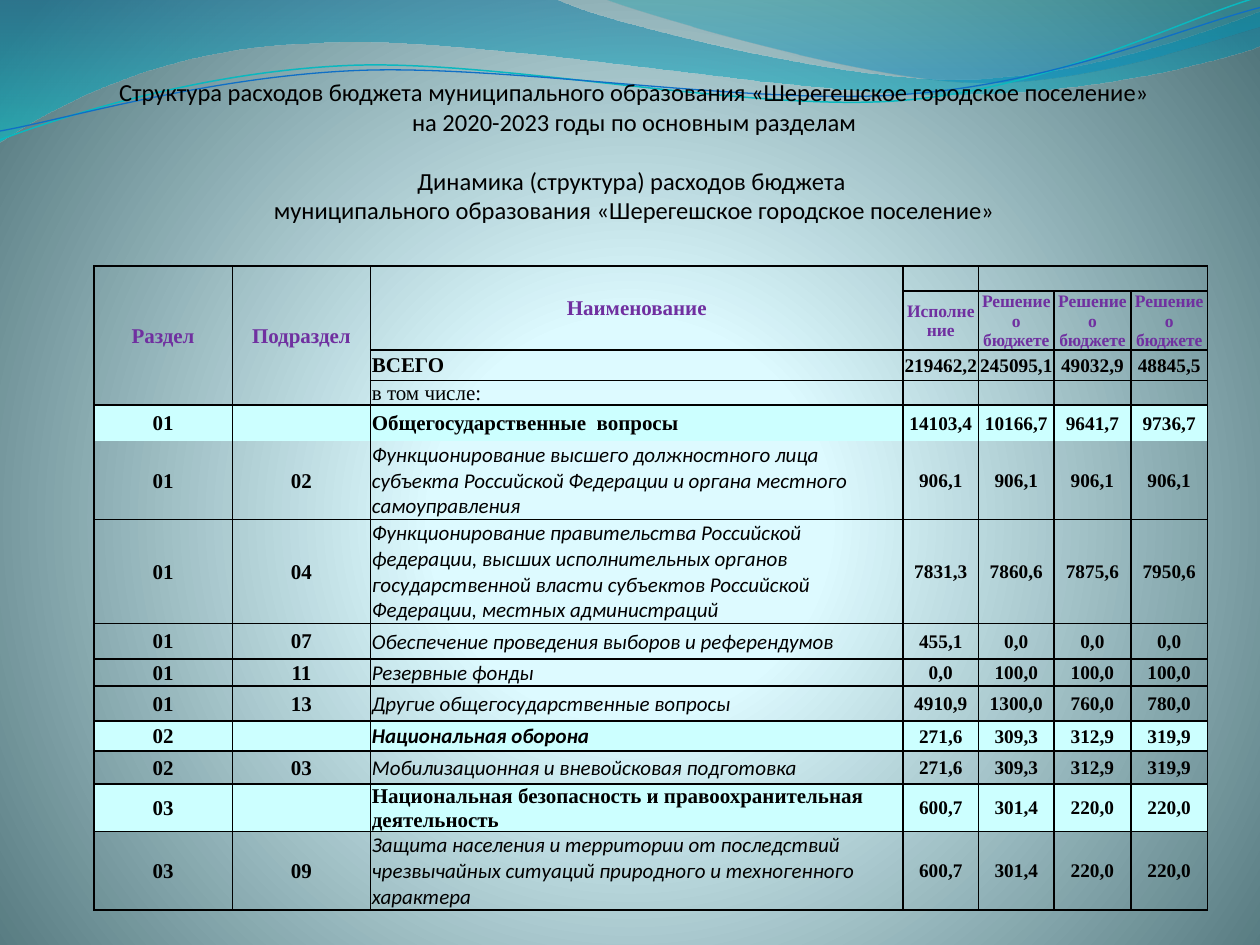
from lxml import etree
from pptx import Presentation
from pptx.dml.color import RGBColor
from pptx.enum.text import MSO_ANCHOR, MSO_AUTO_SIZE, PP_ALIGN
from pptx.oxml.ns import qn
from pptx.util import Inches, Pt

MID, LOW = MSO_ANCHOR.MIDDLE, MSO_ANCHOR.BOTTOM
CENTER, LEFT = PP_ALIGN.CENTER, PP_ALIGN.LEFT
FIT = MSO_AUTO_SIZE.NONE
W, H = Inches(10), Inches(7.5)
UNIT = W / 10  # wave points are tenths of the slide's width
SERIF, SANS = "Times New Roman", "Calibri"
BLACK, PURPLE, AQUA = "000000", "7030A0", "CCFFFF"

# Each wave: start point, then lines (one point) or curves (three points)
WAVES = [
    ([(0, 0), [(4.4, -.01)], [(4.76, .17), (6.64, .63), (7.58, .63)],
      [(8.53, .63), (9.58, .26), (10, .09)], [(10.01, .36)],
      [(9.83, .44), (8.7, .76), (7.46, .75)], [(6.22, .75), (3.82, .28), (2.57, .34)],
      [(1.29, .36), (.46, .83), (-.01, 1.13)]],
     [(0, "0074A1", 45), (100, "00C6CF", 55)]),
    ([(4.79, -.01), [(5.09, .11), (6.82, .62), (7.69, .65)],
      [(8.56, .69), (9.61, .32), (10, .21)], [(10, 0)]],
     [(0, "00A1A9", 30), (80, "008BBF", 45)]),
]
LINES = [
    ([(0, 1.11), [(.48, .93), (1.58, .57), (2.77, .52)],
      [(3.95, .47), (5.93, .89), (7.13, .8)], [(8.33, .71), (9.38, .15), (9.98, -.02)]],
     "0AB8BF", .85),
    ([(0, 1.04), [(.47, .96), (1.64, .61), (2.83, .56)],
      [(4.03, .51), (5.97, .84), (7.17, .75)], [(8.36, .67), (9.41, .21), (10, .06)]],
     "0F6FC6", .75),
]
TITLE = [
    "Структура расходов бюджета муниципального образования «Шерегешское городское поселение»"
    "\vна 2020-2023 годы по основным разделам",
    "Динамика (структура) расходов бюджета "
    "\vмуниципального образования «Шерегешское городское поселение»",
]
COLS = [1.1, 1.1, 4.23, .6, .6, .61, .61]
ROWS = [.2, .47, .24, .18, .29, .47, .83, .28, .21, .28, .24, .26, .36, .47]
PLAN = "Решение о бюджете"
DATA = [
    ("Раздел", "Подраздел", "Наименование", ""),
    ("", "", "", f"Исполнение|{PLAN}|{PLAN}|{PLAN}"),
    ("", "", "ВСЕГО", "219462,2|245095,1|49032,9|48845,5"),
    ("", "", "в том числе:", ""),
    ("01", "", "Общегосударственные  вопросы", "14103,4|10166,7|9641,7|9736,7"),
    ("01", "02", "Функционирование высшего должностного лица субъекта Российской Федерации "
     "и органа местного самоуправления", "906,1|906,1|906,1|906,1"),
    ("01", "04", "Функционирование правительства Российской федерации, высших исполнительных "
     "органов государственной власти субъектов Российской Федерации, местных администраций",
     "7831,3|7860,6|7875,6|7950,6"),
    ("01", "07", "Обеспечение проведения выборов и референдумов", "455,1|0,0|0,0|0,0"),
    ("01", "11", "Резервные фонды", "0,0|100,0|100,0|100,0"),
    ("01", "13", "Другие общегосударственные вопросы", "4910,9|1300,0|760,0|780,0"),
    ("02", "", "Национальная оборона", "271,6|309,3|312,9|319,9"),
    ("02", "03", "Мобилизационная и вневойсковая подготовка", "271,6|309,3|312,9|319,9"),
    ("03", "", "Национальная безопасность и правоохранительная деятельность",
     "600,7|301,4|220,0|220,0"),
    ("03", "09", "Защита населения и территории от последствий чрезвычайных ситуаций "
     "природного и техногенного характера", "600,7|301,4|220,0|220,0"),
]
HEAD, TOP = 2, 4  # heading rows, first section row
MERGES = [(0, 0, 3, 0), (0, 1, 3, 1), (0, 2, 1, 2), (0, 4, 0, 6)]


def color(code):
    return RGBColor.from_string(code)


def grade(fill, stops, aim):
    """Set gradient stops of (place, colour, opacity) and the direction node."""
    fill.gradient()
    grad = fill._xPr.find(qn("a:gradFill"))
    for node in list(grad):
        grad.remove(node)
    group = etree.SubElement(grad, qn("a:gsLst"))
    for pos, code, clear in stops:
        stop = etree.SubElement(group, qn("a:gs"), pos=str(pos * 1000))
        tint = etree.SubElement(stop, qn("a:srgbClr"), val=code)
        if clear < 100:
            etree.SubElement(tint, qn("a:alpha"), val=str(clear * 1000))
    grad.append(aim)


def draw(slide, wave, close):
    """Build the outline from its points, then join triples into curves."""
    start, *parts = wave
    pen = slide.shapes.build_freeform(start[0] * UNIT, start[1] * UNIT)
    pen.add_line_segments([(x * UNIT, y * UNIT) for part in parts for x, y in part],
                          close=close)
    shape = pen.convert_to_shape()
    shape.shadow.inherit = False
    nodes = iter(list(shape._element.iter(qn("a:lnTo"))))
    for part in parts:
        group = [next(nodes) for _ in part]
        if len(group) == 3:
            curve = etree.Element(qn("a:cubicBezTo"))
            group[0].addprevious(curve)
            for node in group:
                curve.append(node[0])
                node.getparent().remove(node)
    return shape


def backdrop(slide):
    aim = etree.Element(qn("a:path"), path="circle")
    etree.SubElement(aim, qn("a:fillToRect"), l="10000", t="110000", r="10000", b="100000")
    grade(slide.background.fill,
          [(0, "DEFBFF", 100), (25, "DDFAFF", 100), (100, "52767C", 100)], aim)
    for wave, stops in WAVES:
        shape = draw(slide, wave, True)
        grade(shape.fill, stops, etree.Element(qn("a:lin"), ang="5400000", scaled="1"))
        shape.line.fill.background()
    for wave, code, width in LINES:
        shape = draw(slide, wave, False)
        shape.fill.background()
        shape.line.color.rgb = color(code)
        shape.line.width = Pt(width)


def style(para, face, size, code, bold=False, slant=False):
    for run in para.runs:
        font = run.font
        font.name, font.size, font.bold, font.italic = face, Pt(size), bold, slant
        font.color.rgb = color(code)


def place(box):
    """Turn percentages of the slide into lengths."""
    return [round(part * side / 100) for part, side in zip(box, (W, H, W, H))]


def heading(slide, box):
    title = slide.shapes.title
    slide.shapes._spTree.append(title._element)  # in front of the waves
    title.left, title.top, title.width, title.height = place(box)
    frame = title.text_frame
    frame.auto_size, frame.vertical_anchor, frame.word_wrap = FIT, LOW, True
    frame.margin_left = frame.margin_right = 0
    frame.margin_top, frame.margin_bottom = Inches(.05), Pt(17)
    frame.text = TITLE[0]
    frame.add_paragraph().text = TITLE[1]
    for para in frame.paragraphs:
        para.alignment = CENTER
        para.space_before = Pt(0)
        style(para, SANS, 14, BLACK)
    frame.paragraphs[1].space_before = Pt(17)


def border(cell, bare):
    props = cell._tc.get_or_add_tcPr()
    for spot, side in enumerate(("lnL", "lnR", "lnT", "lnB")):
        line = etree.Element(qn("a:" + side), w="12700")
        if side == bare:
            etree.SubElement(line, qn("a:noFill"))
        else:
            fill = etree.SubElement(line, qn("a:solidFill"))
            etree.SubElement(fill, qn("a:srgbClr"), val=BLACK)
        props.insert(spot, line)


def look(r, c, row):
    """Face, size, colour, bold and slant of a cell's text."""
    if r < HEAD:
        return SERIF, 12 if c < 3 else 10, PURPLE, True
    if c == 2:
        sub = bool(row[1])
        soft = sub or row[2] == "Национальная оборона"
        return SANS if soft else SERIF, 12, BLACK, not sub and r != 3, soft
    return SERIF, 12 if c < 2 else 11, BLACK, True


def budget(slide, box):
    x, y, w, h = place(box)
    table = slide.shapes.add_table(len(ROWS), len(COLS), x, y, w, h).table
    table.first_row = table.horz_banding = False
    for col, part in zip(table.columns, COLS):
        col.width = int(w * part / sum(COLS))
    for line, part in zip(table.rows, ROWS):
        line.height = int(h * part / sum(ROWS))
    for r, row in enumerate(DATA):
        texts = list(row[:3]) + (row[3].split("|") if row[3] else [""] * 4)
        for c, text in enumerate(texts):
            cell = table.cell(r, c)
            cell.margin_left = cell.margin_right = cell.margin_top = Inches(.01)
            cell.margin_bottom = 0
            cell.vertical_anchor = MID
            para = cell.text_frame.paragraphs[0]
            para.text = text
            para.alignment = LEFT if c == 2 and r >= HEAD else CENTER
            if text:
                style(para, *look(r, c, row))
            else:
                etree.SubElement(para._p, qn("a:endParaRPr"), sz="1000")
            if r >= TOP and not row[1]:
                cell.fill.solid()
                cell.fill.fore_color.rgb = color(AQUA)
            else:
                cell.fill.background()
            border(cell, {TOP: "lnB", TOP + 1: "lnT"}.get(r))
    for top, left, low, right in MERGES:
        table.cell(top, left).merge(table.cell(low, right))


def main():
    deck = Presentation()
    deck.slide_width, deck.slide_height = W, H
    slide = deck.slides.add_slide(deck.slide_layouts[5])
    backdrop(slide)
    heading(slide, (4.95, 5.87, 90.8, 21.07))
    budget(slide, (7.45, 28.13, 88.4, 63.6))
    deck.save("out.pptx")


if __name__ == "__main__":
    main()
